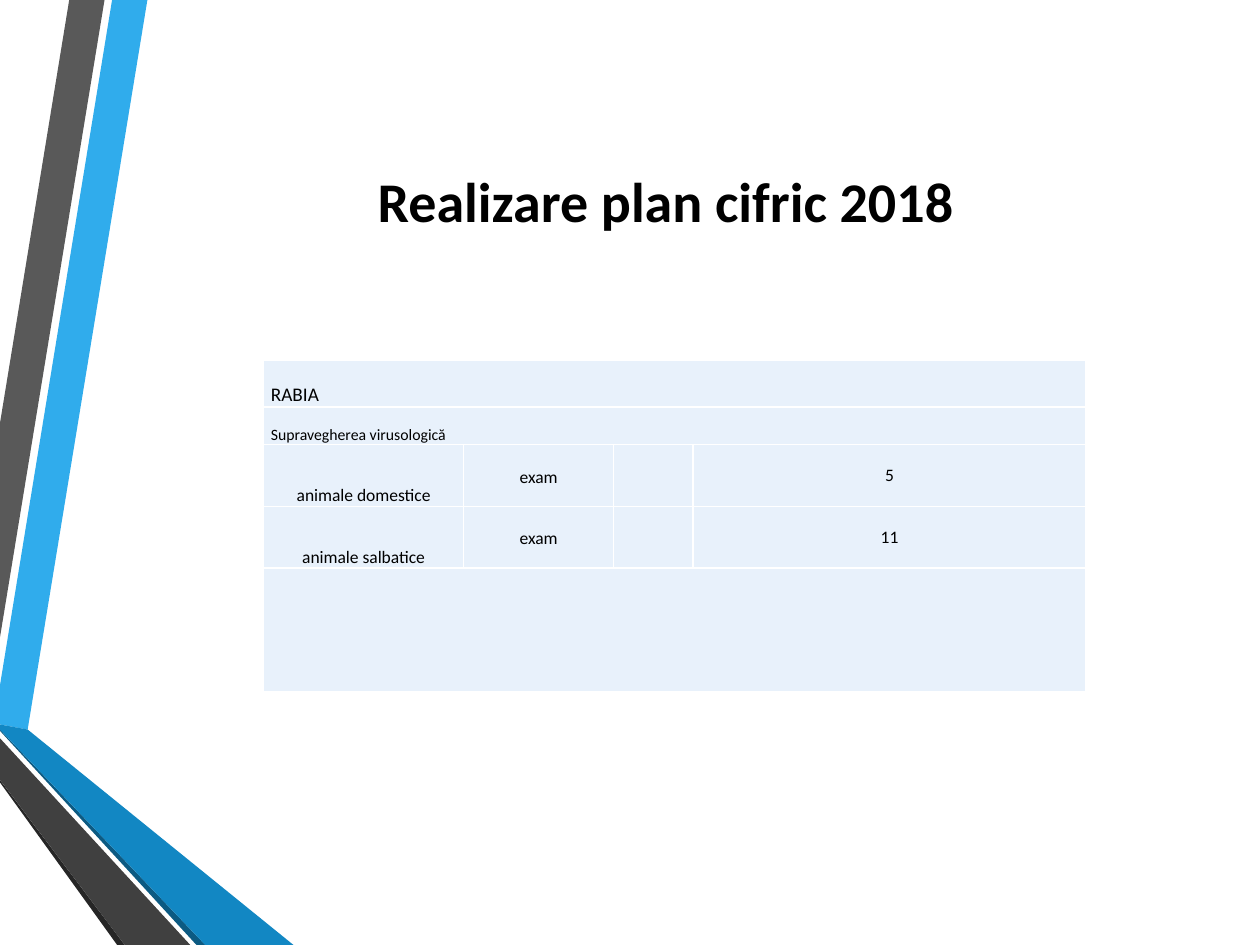
from lxml import etree
from pptx import Presentation
from pptx import util as u
from pptx.dml import color
from pptx.enum import text
from pptx.oxml import ns

ALIGN = text.PP_ALIGN
ANCHOR = text.MSO_ANCHOR

# fill and corner points of each ribbon, back to front
RIBBONS = [
    ("30ACEC", [(0, 5.44), (0, 5.75), (0.22, 5.79), (1.17, 0), (0.89, 0)]),
    ("595959", [(0.83, 0), (0.55, 0), (0, 3.36), (0, 5.06)]),
    ("262626", [(0, 6.19), (0, 6.21), (0.93, 7.5), (0.99, 7.5)]),
    ("0C5A82", [(0, 5.79), (0, 5.8), (1.56, 7.5), (1.63, 7.5)]),
    ("1287C3", [(0, 5.79), (1.63, 7.5), (2.33, 7.5), (0.22, 5.79), (0, 5.75)]),
    ("404040", [(0, 6.19), (0.99, 7.5), (1.51, 7.5), (0, 5.86)]),
]
COLUMNS = [1.59, 1.19, 0.63, 3.12]
ROWS = [0.37, 0.3, 0.49, 0.49, 0.98]
MERGED_ROWS = [0, 1, 4]
ANIMALS = [("animale domestice", "5"), ("animale salbatice", "11")]


def rgb(value):
    return color.RGBColor.from_string(value)


class Deck:
    font = "Calibri"
    ink = "000000"
    cell_fill = "E8F1FB"
    border = "FFFFFF"

    def __init__(self, width, height):
        self.prs = Presentation()
        self.prs.slide_width = u.Inches(width)
        self.prs.slide_height = u.Inches(height)
        self.s = self.prs.slides.add_slide(self.prs.slide_layouts[5])

    def add_text(self, tf, words, size, align, bold=False, spacing=None):
        p = tf.paragraphs[0]
        p.alignment = align
        p.line_spacing = spacing
        r = p.add_run()
        r.text = words
        r.font.name = self.font
        r.font.size = u.Pt(size)
        r.font.bold = bold
        r.font.color.rgb = rgb(self.ink)

    def title(self, words, left, top, width, height):
        sp = self.s.shapes.title
        sp.left, sp.top = u.Inches(left), u.Inches(top)
        sp.width, sp.height = u.Inches(width), u.Inches(height)
        sp.text_frame.vertical_anchor = ANCHOR.MIDDLE
        self.add_text(sp.text_frame, words, 32, ALIGN.CENTER, bold=True)

    def ribbon(self, fill, points):
        corners = [(u.Inches(x), u.Inches(y)) for x, y in points]
        builder = self.s.shapes.build_freeform(*corners[0])
        builder.add_line_segments(corners[1:], close=True)
        sp = builder.convert_to_shape()
        sp.shadow.inherit = False
        sp.fill.solid()
        sp.fill.fore_color.rgb = rgb(fill)
        sp.line.fill.background()

    def table(self, left, top, columns, rows):
        frame = self.s.shapes.add_table(
            len(rows), len(columns), u.Inches(left), u.Inches(top),
            u.Inches(sum(columns)), u.Inches(sum(rows)))
        tbl = frame.table
        tbl.first_row = tbl.horz_banding = False
        for column, width in zip(tbl.columns, columns):
            column.width = u.Inches(width)
        for row, height in zip(tbl.rows, rows):
            row.height = u.Inches(height)
        for cell in tbl.iter_cells():
            self.outline(cell)
            cell.fill.solid()
            cell.fill.fore_color.rgb = rgb(self.cell_fill)
        return tbl

    def outline(self, cell):
        """Give all four sides of a cell the border line."""
        props = cell._tc.get_or_add_tcPr()
        for side in ("lnL", "lnR", "lnT", "lnB"):
            ln = etree.SubElement(props, ns.qn(f"a:{side}"), w=str(u.Pt(1)))
            solid = etree.SubElement(ln, ns.qn("a:solidFill"))
            etree.SubElement(solid, ns.qn("a:srgbClr"), val=self.border)

    def cell(self, cell, words, size=10, align=ALIGN.CENTER,
             anchor=ANCHOR.BOTTOM, spacing=1.15):
        cell.margin_left = cell.margin_right = u.Inches(0.06)
        cell.margin_top = cell.margin_bottom = 0
        cell.vertical_anchor = anchor
        self.add_text(cell.text_frame, words, size, align, spacing=spacing)


def main():
    deck = Deck(10, 7.5)
    for fill, points in RIBBONS:
        deck.ribbon(fill, points)
    deck.title("Realizare plan cifric 2018", 1.07, 0.5, 8.43, 2.17)

    tbl = deck.table(2.09, 2.86, COLUMNS, ROWS)
    for row in MERGED_ROWS:
        tbl.cell(row, 0).merge(tbl.cell(row, len(COLUMNS) - 1))
    deck.cell(tbl.cell(0, 0), "RABIA", 11, ALIGN.LEFT)
    deck.cell(tbl.cell(1, 0), "Supravegherea virusologică", 9, ALIGN.JUSTIFY)
    for row, (animal, count) in enumerate(ANIMALS, start=2):
        deck.cell(tbl.cell(row, 0), animal)
        deck.cell(tbl.cell(row, 1), "exam", anchor=ANCHOR.MIDDLE)
        deck.cell(tbl.cell(row, 3), count, anchor=ANCHOR.MIDDLE, spacing=None)

    deck.prs.save("out.pptx")


if __name__ == "__main__":
    main()
